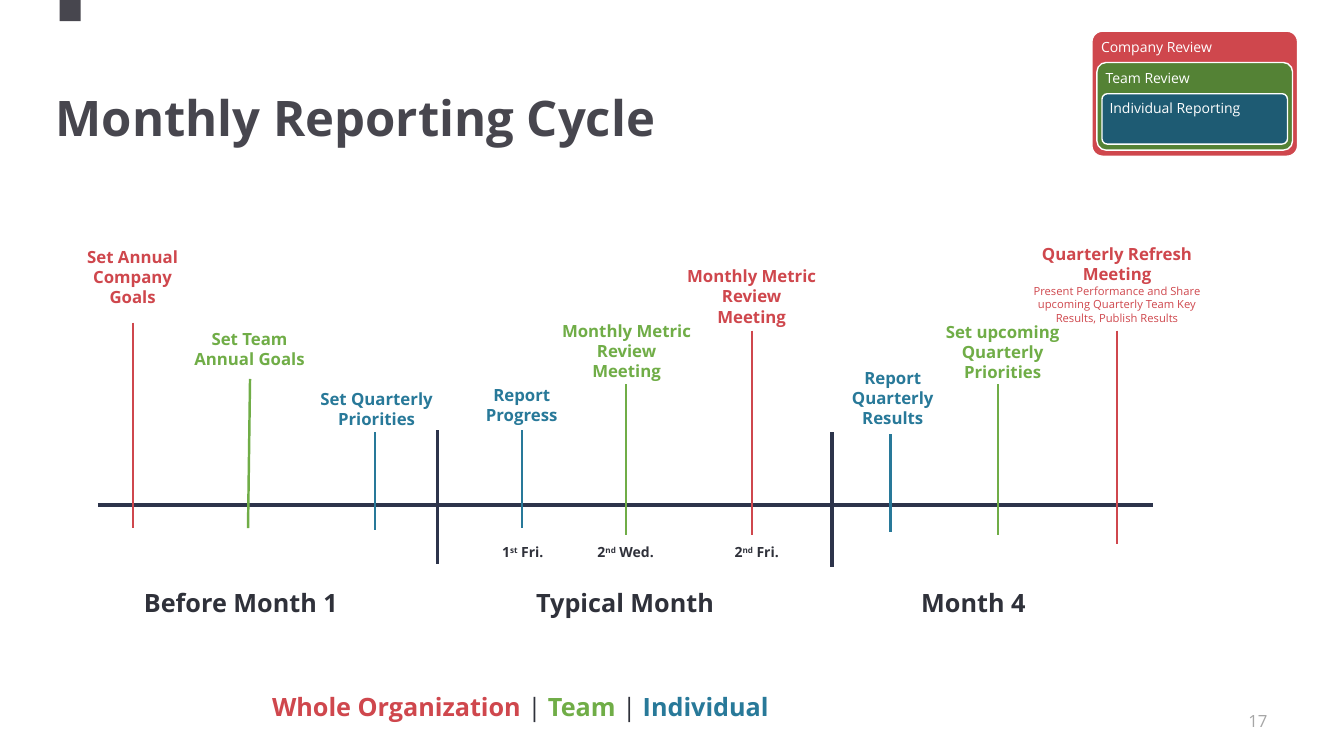
from dataclasses import dataclass

from lxml import etree
from pptx import Presentation
from pptx.dml.color import RGBColor
from pptx.enum.shapes import MSO_CONNECTOR, MSO_SHAPE
from pptx.enum.text import MSO_ANCHOR, PP_ALIGN
from pptx.oxml.ns import qn
from pptx.util import Inches, Pt


@dataclass(frozen=True)
class Theme:
    font: str = "Open Sans"
    title: str = "47464E"
    ink: str = "2F313A"
    axis: str = "2D344B"
    company: str = "CF474D"
    team: str = "70AD47"
    individual: str = "287999"
    team_dark: str = "548235"
    individual_dark: str = "1E5B73"
    grey: str = "A6A6A6"
    white: str = "FFFFFF"
    title_size: float = 35
    heading_size: float = 18
    label_size: float = 12
    tag_size: float = 10
    note_size: float = 8


T = Theme()


def style(r, size, color, bold=True):
    r.font.name = T.font
    r.font.size = Pt(size)
    r.font.bold = bold
    r.font.color.rgb = RGBColor.from_string(color)


def add_text(box, text, size, color, align=PP_ALIGN.CENTER, bold=True):
    tf = s.shapes.add_textbox(*map(Inches, box)).text_frame
    tf.word_wrap = True
    tf.text = text
    for p in tf.paragraphs:
        p.alignment = align
        for r in p.runs:
            style(r, size, color, bold)
    return tf


prs = Presentation()
prs.slide_width, prs.slide_height = Inches(13.33), Inches(7.5)
s = prs.slides.add_slide(prs.slide_layouts[5])

marker = s.shapes.add_shape(
    MSO_SHAPE.RECTANGLE, Inches(0.59), Inches(0), Inches(0.21), Inches(0.21))
marker.shadow.inherit = False
marker.fill.solid()
marker.fill.fore_color.rgb = RGBColor.from_string(T.title)
marker.line.fill.background()

title = s.shapes.title
title.left, title.top = Inches(0.45), Inches(0.89)
title.width, title.height = Inches(12.42), Inches(0.62)
tf = title.text_frame
tf.text = "Monthly Reporting Cycle"
tf.vertical_anchor = MSO_ANCHOR.MIDDLE
tf.margin_left = tf.margin_right = tf.margin_top = tf.margin_bottom = Inches(0.1)
p = tf.paragraphs[0]
p.alignment = PP_ALIGN.LEFT
p.line_spacing = 0.9
style(p.runs[0], T.title_size, T.title)

lines = [
    (0.97, 5.01, 11.44, 5.01, T.axis, 2.75),
    (4.34, 4.27, 4.34, 5.6, T.axis, 2.75),
    (8.25, 4.29, 8.25, 5.63, T.axis, 2.75),
    (1.32, 3.2, 1.32, 5.24, T.company, 1.5),
    (2.48, 3.76, 2.46, 5.24, T.team, 1.75),
    (3.72, 4.29, 3.72, 5.26, T.individual, 1.75),
    (5.18, 4.27, 5.18, 5.24, T.individual, 1.75),
    (6.21, 3.81, 6.21, 5.31, T.team, 1.75),
    (7.46, 3.28, 7.46, 5.31, T.company, 1.5),
    (8.83, 4.31, 8.83, 5.28, T.individual, 1.75),
    (9.9, 3.81, 9.9, 5.31, T.team, 1.75),
    (11.08, 3.28, 11.08, 5.4, T.company, 1.75),
]
for *ends, color, width in lines:
    line = s.shapes.add_connector(MSO_CONNECTOR.STRAIGHT, *map(Inches, ends))
    line.line.color.rgb = RGBColor.from_string(color)
    line.line.width = Pt(width)
    etree.SubElement(line._element.spPr, qn("a:effectLst"))

events = [
    ((0.57, 2.4, 1.49, 0.71), "Set Annual Company\nGoals", T.company),
    ((1.75, 3.21, 1.45, 0.5), "Set Team Annual Goals", T.team),
    ((3.01, 3.81, 1.45, 0.5), "Set Quarterly Priorities", T.individual),
    ((4.43, 3.77, 1.49, 0.5), "Report Progress", T.individual),
    ((5.3, 3.13, 1.83, 0.71), "Monthly Metric\nReview\nMeeting", T.team),
    ((6.71, 2.59, 1.49, 0.71), "Monthly Metric\nReview\nMeeting", T.company),
    ((8.13, 3.6, 1.45, 0.71), "Report Quarterly Results", T.individual),
    ((9.03, 3.14, 1.83, 0.71), "Set upcoming Quarterly\nPriorities", T.team),
]
for box, text, color in events:
    add_text(box, text, T.label_size, color)

refresh = add_text(
    (10.06, 2.37, 2.04, 0.91),
    "Quarterly Refresh Meeting\nPresent Performance and Share upcoming "
    "Quarterly Team Key Results, Publish Results",
    T.label_size, T.company)
style(refresh.paragraphs[1].runs[0], T.note_size, T.company, False)

periods = [
    (1.11, 2.56, "Before Month 1"),
    (4.83, 2.74, "Typical Month"),
    (9.02, 1.27, "Month 4"),
]
for left, width, text in periods:
    add_text((left, 5.78, width, 0.4), text, T.heading_size, T.ink)

days = [(4.55, "1", "st", " Fri."), (5.57, "2", "nd", " Wed."), (6.87, "2", "nd", " Fri.")]
for left, number, suffix, day in days:
    p = add_text((left, 5.34, 1.27, 0.27), number, T.tag_size, T.ink).paragraphs[0]
    for text in (suffix, day):
        r = p.add_run()
        r.text = text
        style(r, T.tag_size, T.ink)
    p.runs[1]._r.get_or_add_rPr().set("baseline", "30000")

key = [
    ("Whole Organization", T.company, True),
    (" | ", T.ink, False),
    ("Team ", T.team, True),
    ("| ", T.ink, False),
    ("Individual", T.individual, True),
]
p = add_text((2.6, 6.81, 8.23, 0.4), "", T.heading_size, T.ink, PP_ALIGN.LEFT).paragraphs[0]
for text, color, bold in key:
    r = p.add_run()
    r.text = text
    style(r, T.heading_size, color, bold)

number = add_text((9.42, 6.95, 3.25, 0.4), "17", T.label_size, T.grey, PP_ALIGN.RIGHT, False)
number.vertical_anchor = MSO_ANCHOR.MIDDLE

levels = [
    ((10.83, 0.31, 2.04, 1.24), 0.085, "Company Review", T.company),
    ((10.88, 0.62, 1.94, 0.87), 0.105, "Team Review", T.team_dark),
    ((10.93, 0.93, 1.84, 0.5), 0.105, "Individual Reporting", T.individual_dark),
]
for box, corner, text, color in levels:
    sp = s.shapes.add_shape(MSO_SHAPE.ROUNDED_RECTANGLE, *map(Inches, box))
    sp.shadow.inherit = False
    sp.adjustments[0] = corner
    sp.fill.solid()
    sp.fill.fore_color.rgb = RGBColor.from_string(color)
    sp.line.color.rgb = RGBColor.from_string(T.white)
    sp.line.width = Pt(1)
    tf = sp.text_frame
    tf.text = text
    tf.vertical_anchor = MSO_ANCHOR.TOP
    tf.margin_left = tf.margin_right = tf.margin_top = tf.margin_bottom = Inches(0.06)
    p = tf.paragraphs[0]
    p.alignment = PP_ALIGN.LEFT
    p.line_spacing = 0.9
    style(p.runs[0], T.tag_size, T.white, False)

prs.save("out.pptx")
